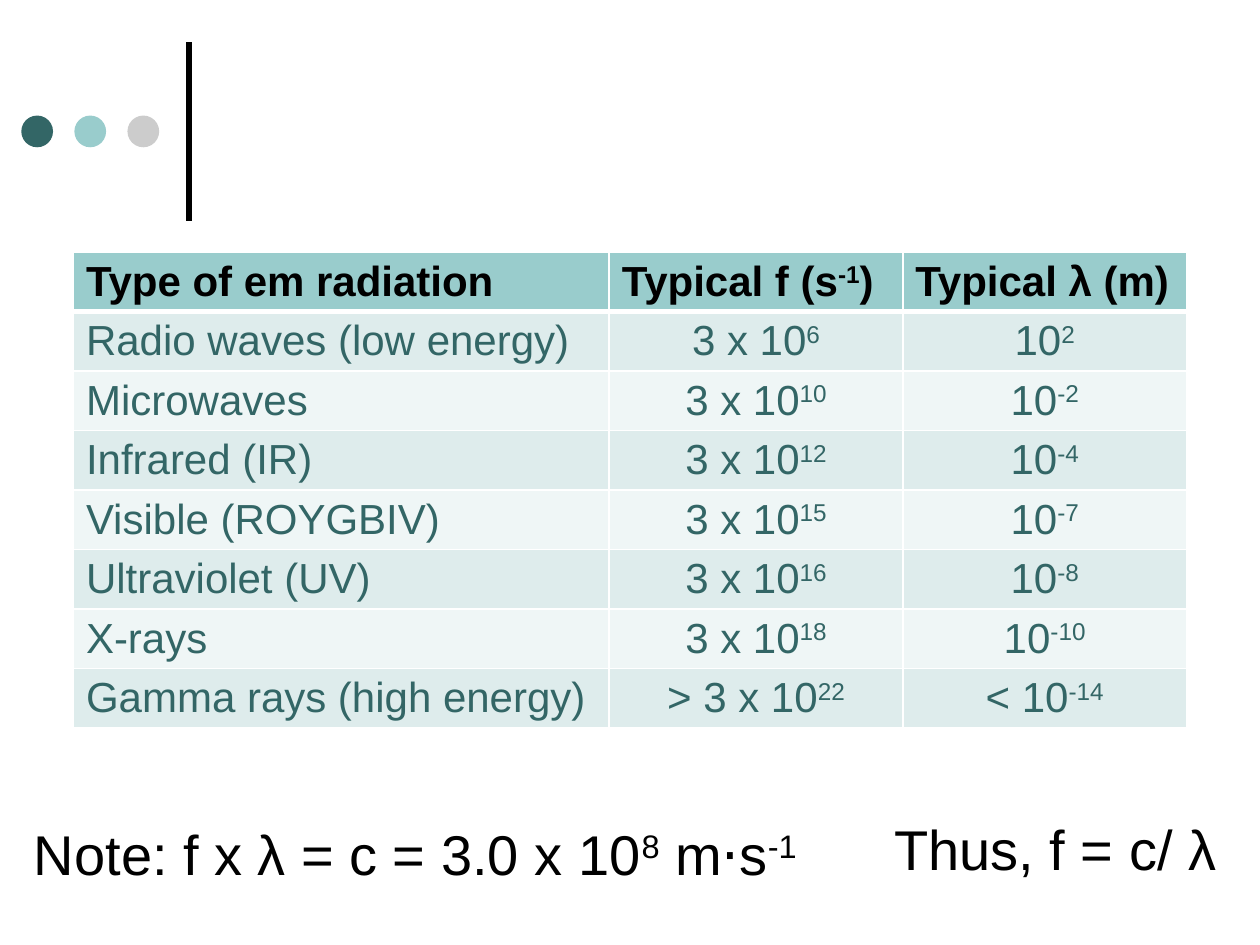
from dataclasses import dataclass

from lxml import etree
from pptx import Presentation
from pptx.dml.color import RGBColor
from pptx.enum.shapes import MSO_CONNECTOR, MSO_SHAPE
from pptx.enum.text import MSO_ANCHOR, MSO_AUTO_SIZE, PP_ALIGN
from pptx.oxml.ns import qn
from pptx.util import Cm, Pt

STRAIGHT = MSO_CONNECTOR.STRAIGHT
OVAL = MSO_SHAPE.OVAL
MIDDLE = MSO_ANCHOR.MIDDLE
NO_AUTOFIT = MSO_AUTO_SIZE.NONE
LEFT, CENTER = PP_ALIGN.LEFT, PP_ALIGN.CENTER

BLACK = RGBColor(0x00, 0x00, 0x00)
WHITE = RGBColor(0xFF, 0xFF, 0xFF)
DARK_TEAL = RGBColor(0x33, 0x66, 0x66)
TEAL = RGBColor(0x99, 0xCC, 0xCC)
GREY = RGBColor(0xCC, 0xCC, 0xCC)
BAND_DARK = RGBColor(0xDE, 0xEC, 0xEC)
BAND_LIGHT = RGBColor(0xEF, 0xF6, 0xF6)

FONT = "Arial"
DOT_SIZE, DOT_GAP = 0.64, 1.07
ROW_HEIGHT = 1.19
COLUMN_WIDTHS = (10.8, 5.92, 5.72)
HEADINGS = ("Type of em radiation", "Typical f (s^-1^)", "Typical λ (m)")


@dataclass(frozen=True)
class Radiation:
    name: str
    frequency: str
    wavelength: str


RADIATIONS = (
    Radiation("Radio waves (low energy)", "3 x 10^6", "10^2"),
    Radiation("Microwaves", "3 x 10^10", "10^-2"),
    Radiation("Infrared (IR)", "3 x 10^12", "10^-4"),
    Radiation("Visible (ROYGBIV)", "3 x 10^15", "10^-7"),
    Radiation("Ultraviolet (UV)", "3 x 10^16", "10^-8"),
    Radiation("X-rays", "3 x 10^18", "10^-10"),
    Radiation("Gamma rays (high energy)", "> 3 x 10^22", "< 10^-14"),
)


def write(tf, text: str, size: int, color: RGBColor, bold=False, align=LEFT) -> None:
    """Fill the first paragraph; each ^ switches superscript on or off."""
    p = tf.paragraphs[0]
    p.alignment = align
    for i, part in enumerate(text.split("^")):
        r = p.add_run()
        r.text = part
        r.font.name = FONT
        r.font.size = Pt(size)
        r.font.bold = bold
        r.font.color.rgb = color
        if i % 2:
            r._r.get_or_add_rPr().set("baseline", "30000")


def write_note(sp, text: str) -> None:
    tf = sp.text_frame
    tf.word_wrap = True
    tf.auto_size = NO_AUTOFIT
    tf.vertical_anchor = MIDDLE
    write(tf, text, 32, BLACK)


def set_borders(cell, bottom: float) -> None:
    tcPr = cell._tc.get_or_add_tcPr()
    for side, width in (("L", 1), ("R", 1), ("T", 1), ("B", bottom)):
        ln = etree.SubElement(tcPr, qn(f"a:ln{side}"), w=str(Pt(width)))
        fill = etree.SubElement(ln, qn("a:solidFill"))
        etree.SubElement(fill, qn("a:srgbClr"), val=str(WHITE))


def style_cell(cell, fill: RGBColor, bottom: float) -> None:
    set_borders(cell, bottom)
    cell.fill.solid()
    cell.fill.fore_color.rgb = fill


def add_ornament(s) -> None:
    line = s.shapes.add_connector(STRAIGHT, Cm(3.81), Cm(4.45), Cm(3.81), Cm(0.84))
    line.line.color.rgb = BLACK
    line.line.width = Pt(3)
    etree.SubElement(line._element.spPr, qn("a:effectLst"))
    for i, color in enumerate((DARK_TEAL, TEAL, GREY)):
        dot = s.shapes.add_shape(OVAL, Cm(0.43 + i * DOT_GAP), Cm(2.33),
                                 Cm(DOT_SIZE), Cm(DOT_SIZE))
        dot.shadow.inherit = False
        dot.fill.solid()
        dot.fill.fore_color.rgb = color
        dot.line.fill.background()


def add_radiation_table(s) -> None:
    rows = len(RADIATIONS) + 1
    table = s.shapes.add_table(rows, len(COLUMN_WIDTHS), Cm(1.48), Cm(5.08),
                               Cm(sum(COLUMN_WIDTHS)), Cm(rows * ROW_HEIGHT)).table
    for column, width in zip(table.columns, COLUMN_WIDTHS):
        column.width = Cm(width)
    for c, heading in enumerate(HEADINGS):
        cell = table.cell(0, c)
        style_cell(cell, TEAL, 3)
        write(cell.text_frame, heading, 24, BLACK, bold=True)
    for i, item in enumerate(RADIATIONS, start=1):
        band = BAND_DARK if i % 2 else BAND_LIGHT
        for c, text in enumerate((item.name, item.frequency, item.wavelength)):
            cell = table.cell(i, c)
            style_cell(cell, band, 1)
            write(cell.text_frame, text, 24, DARK_TEAL, align=CENTER if c else LEFT)


def main() -> None:
    prs = Presentation()
    prs.slide_width, prs.slide_height = Cm(25.4), Cm(19.05)
    s = prs.slides.add_slide(prs.slide_layouts[5])
    add_ornament(s)

    title = s.shapes.title
    title.left, title.top = Cm(0.43), Cm(16.41)
    title.width, title.height = Cm(16.08), Cm(1.57)
    write_note(title, "Note: f x λ = c = 3.0 x 10^8^ m⋅s^-1")

    add_radiation_table(s)
    result = s.shapes.add_textbox(Cm(17.78), Cm(16.31), Cm(7.19), Cm(1.57))
    write_note(result, "Thus, f = c/ λ")
    prs.save("out.pptx")


if __name__ == "__main__":
    main()
